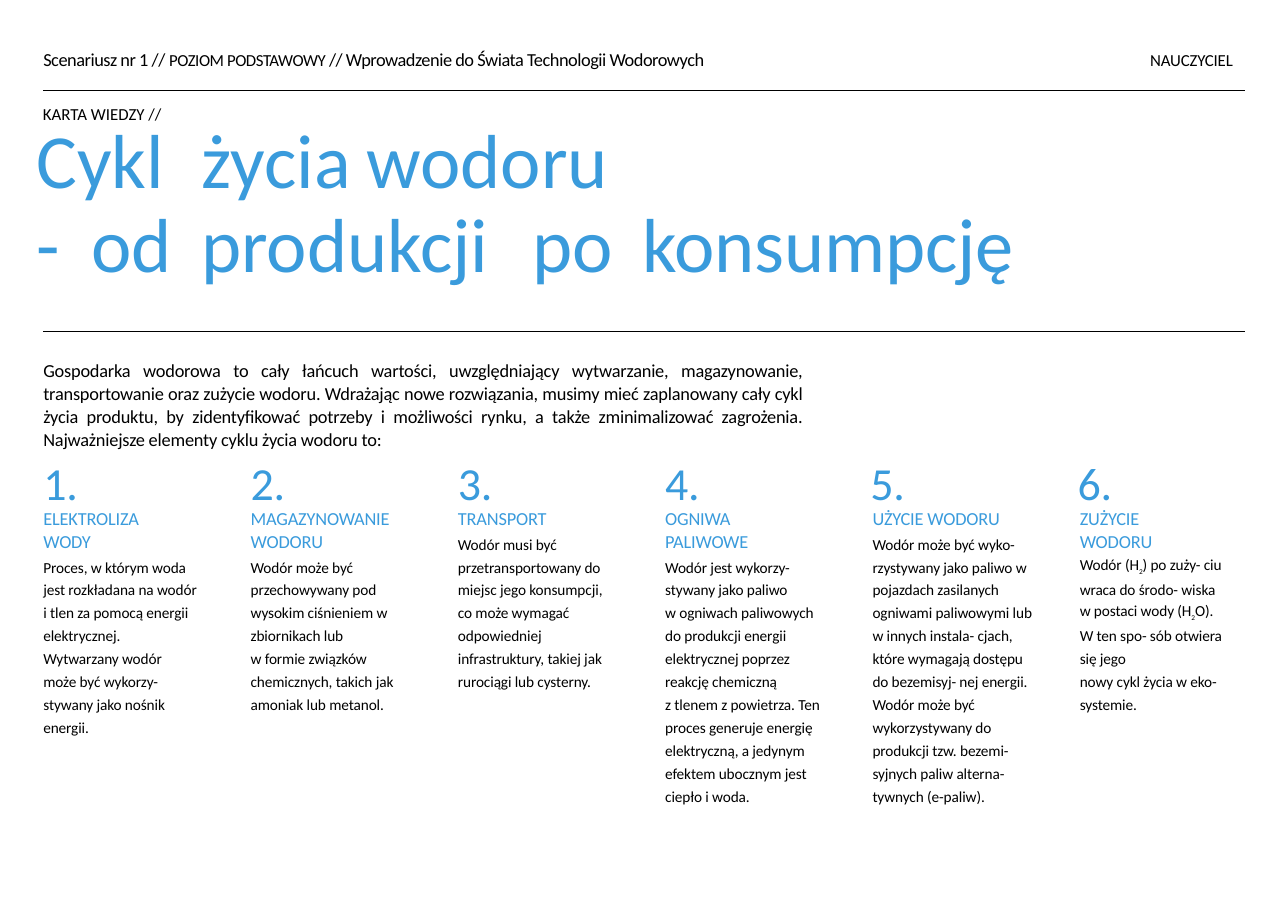
from lxml import etree
from pptx import Presentation
from pptx.dml.color import RGBColor
from pptx.enum.shapes import MSO_CONNECTOR
from pptx.enum.text import MSO_AUTO_SIZE, PP_ALIGN
from pptx.oxml.ns import qn
from pptx.util import Cm, Pt

JUSTIFY = PP_ALIGN.JUSTIFY
GROW = MSO_AUTO_SIZE.SHAPE_TO_FIT_TEXT
STRAIGHT = MSO_CONNECTOR.STRAIGHT
FONT, BLACK, BLUE = "Calibri", "000000", "3A9BDC"
LEFT, RULE_LEFT, RULE_RIGHT = 0.97, 1.0, 28.7
RULES = [2.09, 7.63]
INDENT = 0.03
COLUMN_TOP, COLUMN_STEP = 10.5, 4.78

HEADER = [("Scenariusz nr 1 // ", 12), ("POZIOM PODSTAWOWY ", 11),
          ("// Wprowadzenie do Świata Technologii Wodorowych", 12)]
ROLE = "NAUCZYCIEL"
KICKER = "KARTA WIEDZY //"
# text, line spacing in points, tab stops in cm
TITLE = [("Cykl\tżycia\twodoru", 52.6, [3.63, 7.82]),
         ("-\tod\tprodukcji\tpo\tkonsumpcję", 55, [1.24, 3.63, 11.15, 13.54])]
INTRO = ("Gospodarka wodorowa to cały łańcuch wartości, uwzględniający wytwarzanie, "
         "magazynowanie, transportowanie oraz zużycie wodoru. Wdrażając nowe rozwiązania, "
         "musimy mieć zaplanowany cały cykl życia produktu, by zidentyfikować potrzeby i "
         "możliwości rynku, a także zminimalizować zagrożenia. Najważniejsze elementy "
         "cyklu życia wodoru to:")
# heading lines, (text, right margin) pairs, width, height, outdent; _2_ is a subscript
STAGES = [
    (["ELEKTROLIZA", "WODY"],
     [("Proces, w którym woda jest rozkładana na wodór i tlen za pomocą energii "
       "elektrycznej.", 0.08),
      ("Wytwarzany wodór może być wykorzy- stywany jako nośnik energii.", 0.4)],
     3.71, 6.5, 0),
    (["MAGAZYNOWANIE", "WODORU"],
     [("Wodór może być przechowywany pod wysokim ciśnieniem w zbiornikach lub", 0),
      ("w formie związków chemicznych, takich jak amoniak lub metanol.", 0)],
     3.76, 5.97, 0),
    (["TRANSPORT"],
     [("Wodór musi być przetransportowany do miejsc jego konsumpcji, co może wymagać "
       "odpowiedniej", 0.2),
      ("infrastruktury, takiej jak rurociągi lub cysterny.", 0)],
     3.81, 5.44, 0),
    (["OGNIWA", "PALIWOWE"],
     [("Wodór jest wykorzy- stywany jako paliwo", 0),
      ("w ogniwach paliwowych do produkcji energii elektrycznej poprzez reakcję "
       "chemiczną", 0.1),
      ("z tlenem z powietrza. Ten proces generuje energię elektryczną, a jedynym "
       "efektem ubocznym jest ciepło i woda.", 0.1)],
     3.78, 8.61, 0),
    (["UŻYCIE WODORU"],
     [("Wodór może być wyko- rzystywany jako paliwo w pojazdach zasilanych ogniwami "
       "paliwowymi lub w innych instala- cjach, które wymagają dostępu do bezemisyj- "
       "nej energii. Wodór może być wykorzystywany do produkcji tzw. bezemi- syjnych "
       "paliw alterna- tywnych (e-paliw).", 0)],
     3.91, 8.08, 0.05),
    (["ZUŻYCIE", "WODORU"],
     [("Wodór (H_2_) po zuży- ciu wraca do środo- wiska w postaci wody (H_2_O). W ten "
       "spo- sób otwiera się jego", 0.3),
      ("nowy cykl życia w eko- systemie.", 0)],
     3.78, 5.97, 0.1),
]


def add_box(page, left, top, width, height):
    frame = page.shapes.add_textbox(Cm(left), Cm(top), Cm(width), Cm(height)).text_frame
    frame.word_wrap = True
    frame.auto_size = GROW
    frame.margin_left = frame.margin_right = frame.margin_bottom = 0
    frame.margin_top = Cm(0.03)
    return frame


def add_para(frame, spans, color=BLACK, track=0, line=None, before=0,
             indent=INDENT, right=0, tabs=()):
    """Fill the empty first paragraph or append one; spans are (text, size[, baseline])."""
    first = frame.paragraphs[0]
    para = first if not first.runs else frame.add_paragraph()
    para.space_before = Pt(before)
    if line:
        para.line_spacing = line
    props = para._p.get_or_add_pPr()
    props.set("marL", str(Cm(indent)))
    props.set("marR", str(Cm(right)))
    props.set("indent", "0")
    if tabs:
        stops = etree.SubElement(props, qn("a:tabLst"))
        for stop in tabs:
            etree.SubElement(stops, qn("a:tab"), pos=str(Cm(stop)), algn="l")
    for text, size, *baseline in spans:
        span = para.add_run()
        span.text = text
        span.font.name = FONT
        span.font.size = Pt(size)
        span.font.color.rgb = RGBColor.from_string(color)
        span_props = span._r.get_or_add_rPr()
        span_props.set("spc", str(round(track * 100)))
        if baseline:
            span_props.set("baseline", str(baseline[0]))
    return para


def body_spans(text):
    return [(part, 8.2, -35000) if place % 2 else (part, 10)
            for place, part in enumerate(text.split("_"))]


def add_stage(page, index, stage):
    headings, paragraphs, width, height, outdent = stage
    frame = add_box(page, LEFT + index * COLUMN_STEP - outdent, COLUMN_TOP, width, height)
    indent = INDENT + outdent
    add_para(frame, [(f"{index + 1}.", 30)], BLUE, -0.2, Pt(34.5), 1,
             indent=max(INDENT, indent - 0.05))
    for place, heading in enumerate(headings):
        add_para(frame, [(heading, 12)], BLUE, -0.1, None if place else Pt(12.9),
                 0.6 if place else 0, indent)
    for place, (text, right) in enumerate(paragraphs):
        add_para(frame, body_spans(text), track=-0.05, line=Pt(15),
                 before=0 if place else 0.6, indent=indent, right=right)


def add_rule(page, top):
    rule = page.shapes.add_connector(STRAIGHT, Cm(RULE_LEFT), Cm(top), Cm(RULE_RIGHT), Cm(top))
    rule.line.color.rgb = RGBColor.from_string(BLACK)
    rule.line.width = Pt(0.5)
    etree.SubElement(rule._element.spPr, qn("a:effectLst"))


def main():
    deck = Presentation()
    deck.slide_width, deck.slide_height = Cm(29.7), Cm(21)
    page = deck.slides.add_slide(deck.slide_layouts[6])

    add_para(add_box(page, LEFT, 1.07, 16.87, 0.58), HEADER, track=-0.3, before=1)
    add_para(add_box(page, 26.49, 1.12, 2.24, 0.53), [(ROLE, 11)], track=-0.1, before=1)
    for top in RULES:
        add_rule(page, top)

    title = add_box(page, 0.81, 2.44, 23.01, 4.24)
    add_para(title, [(KICKER, 11)], line=Pt(10.8), before=1, indent=0.18)
    for text, line, tabs in TITLE:
        add_para(title, [(text, 50)], BLUE, -0.1, Pt(line), tabs=tabs)

    intro = add_box(page, LEFT, 8.23, 17.55, 2.16)
    add_para(intro, [(INTRO, 12)], track=-0.13, line=1.04, before=0.4).alignment = JUSTIFY

    for index, stage in enumerate(STAGES):
        add_stage(page, index, stage)
    deck.save("out.pptx")


if __name__ == "__main__":
    main()
